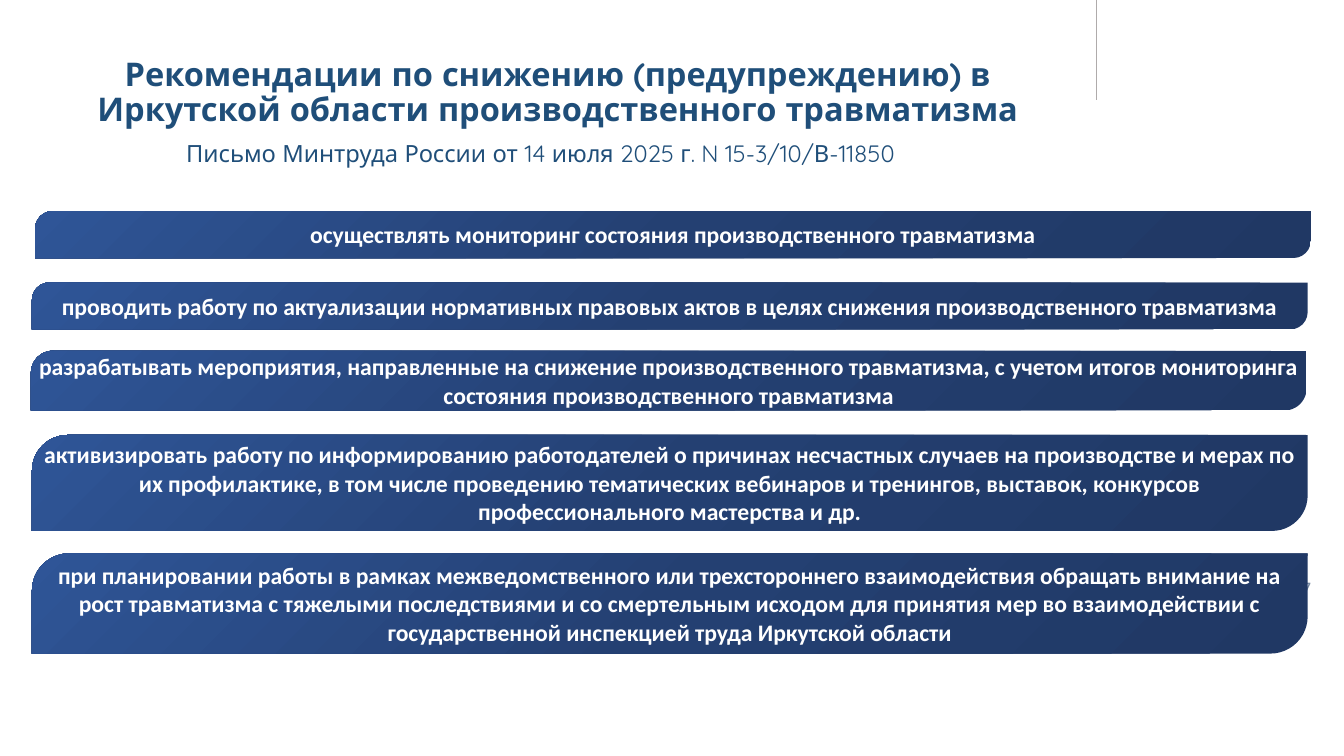
from copy import deepcopy

from pptx import Presentation
from pptx.dml.color import RGBColor
from pptx.enum.shapes import MSO_CONNECTOR, MSO_SHAPE
from pptx.enum.text import MSO_ANCHOR, MSO_AUTO_SIZE, PP_ALIGN
from pptx.oxml.ns import qn
from pptx.util import Inches, Pt

COLORS = {
    "heading": "1F4E79",
    "rule": "AFABAB",
    "number": "7688A1",
    "text": "FFFFFF",
    "dark": "203864",
    "middle": "244072",
    "light": "2F5597",
}

BAR_WIDTH = 11.96
RECOMMENDATIONS = [
    (0.33, 1.98, 0.44, "осуществлять мониторинг состояния производственного травматизма"),
    (0.3, 2.65, 0.44, "проводить работу по актуализации нормативных правовых актов "
     "в целях снижения производственного травматизма"),
    (0.29, 3.29, 0.56, "разрабатывать мероприятия, направленные на снижение производственного "
     "травматизма, с учетом итогов мониторинга состояния производственного травматизма"),
    (0.3, 4.08, 0.9, "активизировать работу по информированию работодателей о причинах "
     "несчастных случаев на производстве и мерах по их профилактике, в том числе проведению "
     "тематических вебинаров и тренингов, выставок, конкурсов профессионального мастерства и др."),
    (0.3, 5.19, 0.94, "при планировании работы в рамках межведомственного или трехстороннего "
     "взаимодействия обращать внимание на рост травматизма с тяжелыми последствиями и со "
     "смертельным исходом для принятия мер во взаимодействии с государственной инспекцией "
     "труда Иркутской области"),
]


def color(name):
    """Return the named colour."""
    return RGBColor.from_string(COLORS[name])


def write(shape, text, font, size, tint, bold=False, align=PP_ALIGN.CENTER):
    """Fill a shape with one formatted paragraph and return the paragraph."""
    shape.text_frame.text = text
    para = shape.text_frame.paragraphs[0]
    para.alignment = align
    for span in para.runs:
        span.font.name = font
        span.font.size = Pt(size)
        span.font.bold = bold
        span.font.color.rgb = color(tint)
    return para


def clear_margins(frame):
    """Remove the inner margins of a text frame."""
    frame.margin_left = frame.margin_right = 0
    frame.margin_top = frame.margin_bottom = 0


def add_heading(page, left, top, width):
    """Place the title and the subtitle beneath it."""
    title = page.shapes.title
    title.left, title.top = Inches(left), Inches(top)
    title.width, title.height = Inches(width), Inches(0.86)
    para = write(title, "Рекомендации по снижению (предупреждению) в Иркутской области "
                 "производственного травматизма", "Quicksand", 22, "heading", bold=True)
    para.line_spacing = 0.9
    title.text_frame.vertical_anchor = MSO_ANCHOR.TOP
    title.text_frame.auto_size = MSO_AUTO_SIZE.NONE

    subtitle = page.shapes.add_textbox(
        Inches(left + 0.97), Inches(top + 0.8), Inches(7.44), Inches(0.35))
    write(subtitle, "Письмо Минтруда России от 14 июля 2025 г. N 15-3/10/В-11850",
          "Quicksand", 16, "heading")
    clear_margins(subtitle.text_frame)
    subtitle.text_frame.word_wrap = False


def add_rule(page, left, top, height):
    """Draw the thin vertical line at the top of the page."""
    rule = page.shapes.add_connector(
        MSO_CONNECTOR.STRAIGHT, Inches(left), Inches(top), Inches(left), Inches(top + height))
    rule.line.color.rgb = color("rule")
    rule.line.width = Pt(0.75)
    properties = rule._element.spPr
    properties.append(properties.makeelement(qn("a:effectLst"), {}))


def add_page_number(page, left, top, width, height):
    """Place the page number."""
    box = page.shapes.add_textbox(Inches(left), Inches(top), Inches(width), Inches(height))
    box.text_frame.word_wrap = True
    write(box, "7", "Calibri", 14, "number", align=PP_ALIGN.RIGHT)


def paint_gradient(bar):
    """Fill a bar with the diagonal three-stop gradient."""
    bar.fill.gradient()
    bar.fill.gradient_angle = 135
    stop_list = bar._element.spPr.find(qn("a:gradFill")).find(qn("a:gsLst"))
    stop_list.insert(1, deepcopy(stop_list[0]))
    stops = zip(bar.fill.gradient_stops, (0, 0.5, 1), ("dark", "middle", "light"))
    for stop, position, tint in stops:
        stop.position = position
        stop.color.rgb = color(tint)


def add_recommendation(page, left, top, width, height, text):
    """Draw one recommendation bar with its text."""
    bar = page.shapes.add_shape(
        MSO_SHAPE.ROUND_2_DIAG_RECTANGLE,
        Inches(left), Inches(top), Inches(width), Inches(height))
    bar.adjustments[0] = 0.372
    bar.adjustments[1] = 0
    bar.shadow.inherit = False
    bar.line.fill.background()
    paint_gradient(bar)
    frame = bar.text_frame
    clear_margins(frame)
    frame.word_wrap = True
    frame.vertical_anchor = MSO_ANCHOR.MIDDLE
    write(bar, text, "Calibri", 16, "text", bold=True)


def build_recommendations_page(deck):
    """Build the page of recommendations."""
    page = deck.slides.add_slide(deck.slide_layouts[5])
    add_rule(page, 10.28, 0, 0.94)
    add_heading(page, 0.38, 0.5, 9.7)
    add_page_number(page, 9.45, 5.35, 2.94, 0.38)
    for left, top, height, text in RECOMMENDATIONS:
        add_recommendation(page, left, top, BAR_WIDTH, height, text)


def main():
    """Create and save the deck."""
    deck = Presentation()
    deck.slide_width, deck.slide_height = Inches(12.6), Inches(7.09)
    build_recommendations_page(deck)
    deck.save("out.pptx")


if __name__ == "__main__":
    main()
